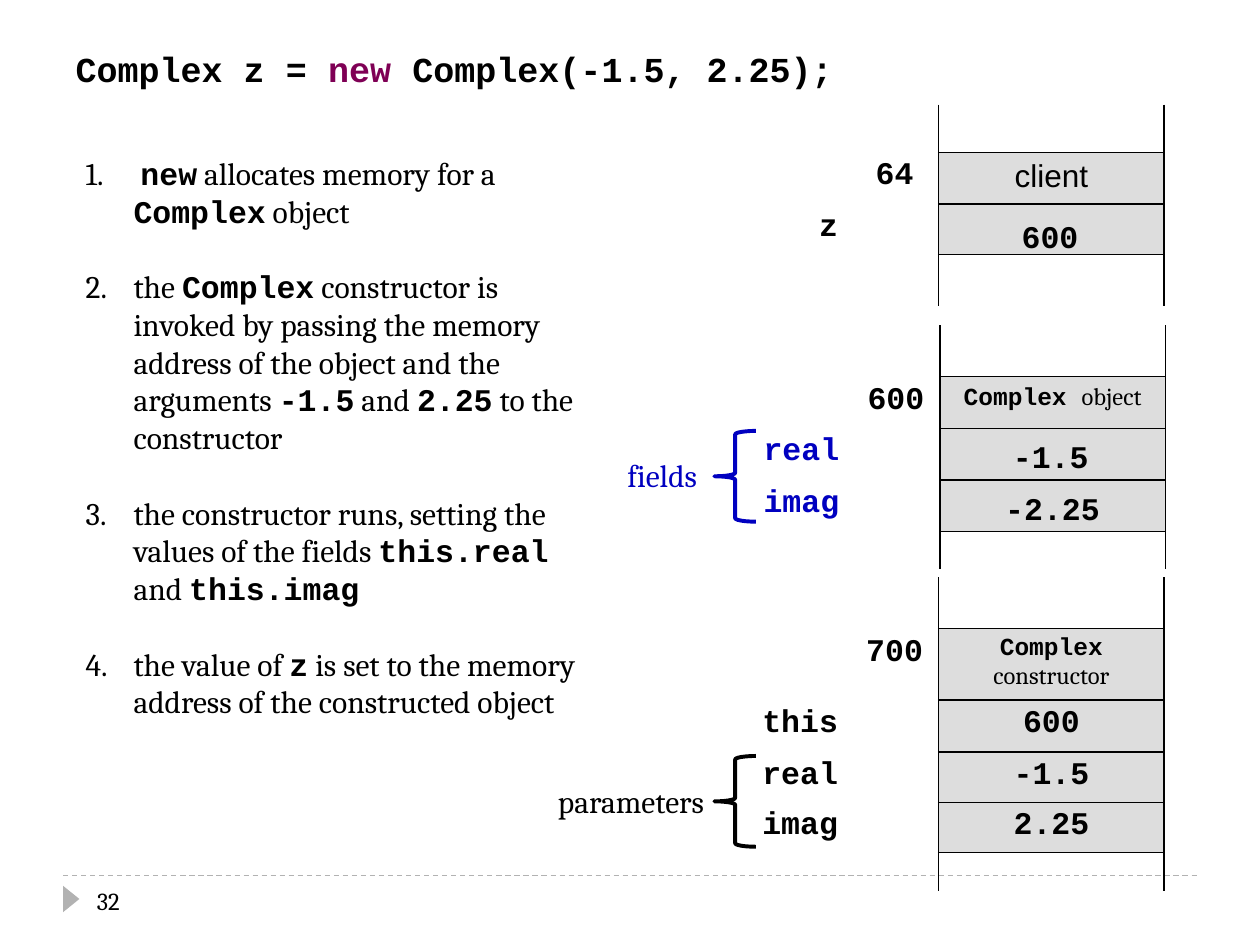
from lxml import etree
from pptx import Presentation
from pptx.dml.color import RGBColor
from pptx.enum import dml, shapes, text
from pptx.oxml import ns
from pptx.util import Inches, Pt

BLACK, BLUE, PURPLE = "000000", "0000C0", "7F0055"
LIGHT_GRAY, MID_GRAY = "DDDDDD", "B2B2B2"
NO_STYLE = "{2D5ABB26-0587-4C30-8999-92F81FD0307C}"


def rgb(value):
    return RGBColor.from_string(value)


def write(paragraph, markup, size=18, color=BLACK, font="Cambria"):
    """Append runs; pieces between backticks are set as bold code."""
    for index, piece in enumerate(markup.split("`")):
        if piece:
            run = paragraph.add_run()
            run.text = piece
            code = index % 2 == 1
            run.font.name = "Courier New" if code else font
            run.font.bold = code
            run.font.size = Pt(size)
            run.font.color.rgb = rgb(color)


presentation = Presentation()
presentation.slide_width, presentation.slide_height = Inches(10), Inches(7.5)
slide = presentation.slides.add_slide(presentation.slide_layouts[1])

# Footer: dashed rule, marker and page number
rule = slide.shapes.add_connector(
    shapes.MSO_CONNECTOR.STRAIGHT, Inches(0.5), Inches(6.95), Inches(9.5), Inches(6.95))
rule.line.color.rgb = rgb(MID_GRAY)
rule.line.width = Pt(0.75)
rule.line.dash_style = dml.MSO_LINE.DASH
etree.SubElement(rule._element.spPr, ns.qn("a:effectLst"))

marker = slide.shapes.add_shape(
    shapes.MSO_SHAPE.ISOSCELES_TRIANGLE, Inches(0.46), Inches(7.07), Inches(0.21), Inches(0.13))
marker.rotation = 90
marker.shadow.inherit = False
marker.fill.solid()
marker.fill.fore_color.rgb = rgb(MID_GRAY)
marker.line.fill.background()

page = slide.shapes.add_textbox(Inches(0.67), Inches(6.95), Inches(2.17), Inches(0.4))
page.text_frame.vertical_anchor = text.MSO_ANCHOR.MIDDLE
write(page.text_frame.paragraphs[0], "32", 14)

# Title: the statement being explained
title = slide.shapes.title
title.left, title.top, title.width, title.height = (
    Inches(0.5), Inches(0.33), Inches(9), Inches(0.5))
title.text_frame.vertical_anchor = text.MSO_ANCHOR.TOP
title.text_frame.auto_size = text.MSO_AUTO_SIZE.NONE
paragraph = title.text_frame.paragraphs[0]
paragraph.alignment = text.PP_ALIGN.LEFT
write(paragraph, "`Complex z = `", 20)
write(paragraph, "`new`", 20, PURPLE)
write(paragraph, "` Complex(-1.5, 2.25);`", 20)

# Numbered steps
steps = [
    " `new` allocates memory for a `Complex` object",
    "the `Complex` constructor is invoked by passing the memory address of the object "
    "and the arguments `-1.5` and `2.25` to the constructor",
    "the constructor runs, setting the values of the fields `this.real` and `this.imag`",
    "the value of `z` is set to the memory address of the constructed object",
]
body = slide.placeholders[1]
body.left, body.top, body.width, body.height = (
    Inches(0.58), Inches(1.17), Inches(4.25), Inches(4.95))
body.text_frame.auto_size = text.MSO_AUTO_SIZE.NONE
for index, step in enumerate(steps):
    paragraph = body.text_frame.paragraphs[0] if index == 0 else body.text_frame.add_paragraph()
    paragraph.space_before = Pt(0)
    paragraph.space_after = Pt(21.5)
    properties = paragraph._p.get_or_add_pPr()
    properties.set("marL", str(Inches(0.38)))
    properties.set("indent", str(-Inches(0.38)))
    etree.SubElement(properties, ns.qn("a:buFont"), typeface="Cambria")
    etree.SubElement(properties, ns.qn("a:buAutoNum"), type="arabicPeriod")
    write(paragraph, step)

# Memory blocks: left, top, label colour, rows of (height, label, address, value, value size)
blocks = [
    (5.58, 0.83, BLACK, [
        (0.38, "", "", "", 18),
        (0.41, "", "`64`", "client", 18),
        (0.38, "`z`", "", "", 18),
        (0.41, "", "", "", 18)]),
    (5.59, 2.58, BLUE, [
        (0.41, "", "", "", 18),
        (0.41, "", "`600`", "`Complex `object", 14),
        (0.41, "`real`", "", "", 18),
        (0.41, "`imag`", "", "", 18),
        (0.3, "", "", "", 18)]),
    (5.58, 4.58, BLACK, [
        (0.41, "", "", "", 18),
        (0.54, "", "`700`", "`Complex `constructor", 14),
        (0.41, "`this`", "", "`600`", 18),
        (0.39, "`real`", "", "`-1.5`", 18),
        (0.39, "`imag`", "", "`2.25`", 18),
        (0.3, "", "", "", 18)]),
]
column_widths = [1.17, 0.7, 1.79]
for left, top, label_color, rows in blocks:
    height = sum(row[0] for row in rows)
    table = slide.shapes.add_table(
        len(rows), 3, Inches(left), Inches(top), Inches(sum(column_widths)), Inches(height)).table
    table.first_row = table.horz_banding = False
    table._tbl.tblPr[0].text = NO_STYLE
    for column, width in zip(table.columns, column_widths):
        column.width = Inches(width)
    for row_index, (row_height, label, address, value, value_size) in enumerate(rows):
        table.rows[row_index].height = Inches(row_height)
        first, last = row_index == 0, row_index == len(rows) - 1
        contents = [
            (label, 18, label_color, text.PP_ALIGN.RIGHT),
            (address, 18, BLACK, text.PP_ALIGN.CENTER),
            (value, value_size, BLACK, text.PP_ALIGN.CENTER),
        ]
        for column_index, (markup, size, color, alignment) in enumerate(contents):
            cell = table.cell(row_index, column_index)
            paragraph = cell.text_frame.paragraphs[0]
            paragraph.alignment = alignment
            if markup:
                write(paragraph, markup, size, color, "Arial" if markup == "client" else "Cambria")
            else:
                # Small type keeps empty rows from growing
                etree.SubElement(paragraph._p, ns.qn("a:endParaRPr"), sz="1000")
            cell.fill.background()

        # The memory column is open at its top and bottom ends
        memory = table.cell(row_index, 2)
        cell_properties = memory._tc.get_or_add_tcPr()
        sides = ["L", "R"] + ([] if first else ["T"]) + ([] if last else ["B"])
        for position, side in enumerate(sides):
            border = etree.Element(ns.qn("a:ln" + side), w=str(Pt(1)))
            fill = etree.SubElement(border, ns.qn("a:solidFill"))
            etree.SubElement(fill, ns.qn("a:srgbClr"), val=BLACK)
            cell_properties.insert(position, border)
        if not first and not last:
            memory.fill.solid()
            memory.fill.fore_color.rgb = rgb(LIGHT_GRAY)

# Values stored in memory
for left, top, width, value in [
    (7.94, 3.42, 0.81, "-1.5"),
    (7.88, 3.83, 0.96, "-2.25"),
    (8.01, 1.67, 0.65, "600"),
]:
    box = slide.shapes.add_textbox(Inches(left), Inches(top), Inches(width), Inches(0.4))
    box.text_frame.word_wrap = False
    write(box.text_frame.paragraphs[0], f"`{value}`")

# Braces with their captions
for caption, left, top, width, brace_top, color in [
    ("fields", 4.88, 3.57, 0.79, 3.42, BLUE),
    ("parameters", 4.33, 6.16, 1.42, 6, BLACK),
]:
    group = slide.shapes.add_group_shape()
    box = group.shapes.add_textbox(Inches(left), Inches(top), Inches(width), Inches(0.4))
    box.text_frame.word_wrap = False
    write(box.text_frame.paragraphs[0], caption, color=color)
    brace = group.shapes.add_shape(
        shapes.MSO_SHAPE.LEFT_BRACE, Inches(5.67), Inches(brace_top), Inches(0.33), Inches(0.72))
    brace.shadow.inherit = False
    brace.fill.background()
    brace.line.color.rgb = rgb(color)
    brace.line.width = Pt(2.25)

presentation.save("out.pptx")
